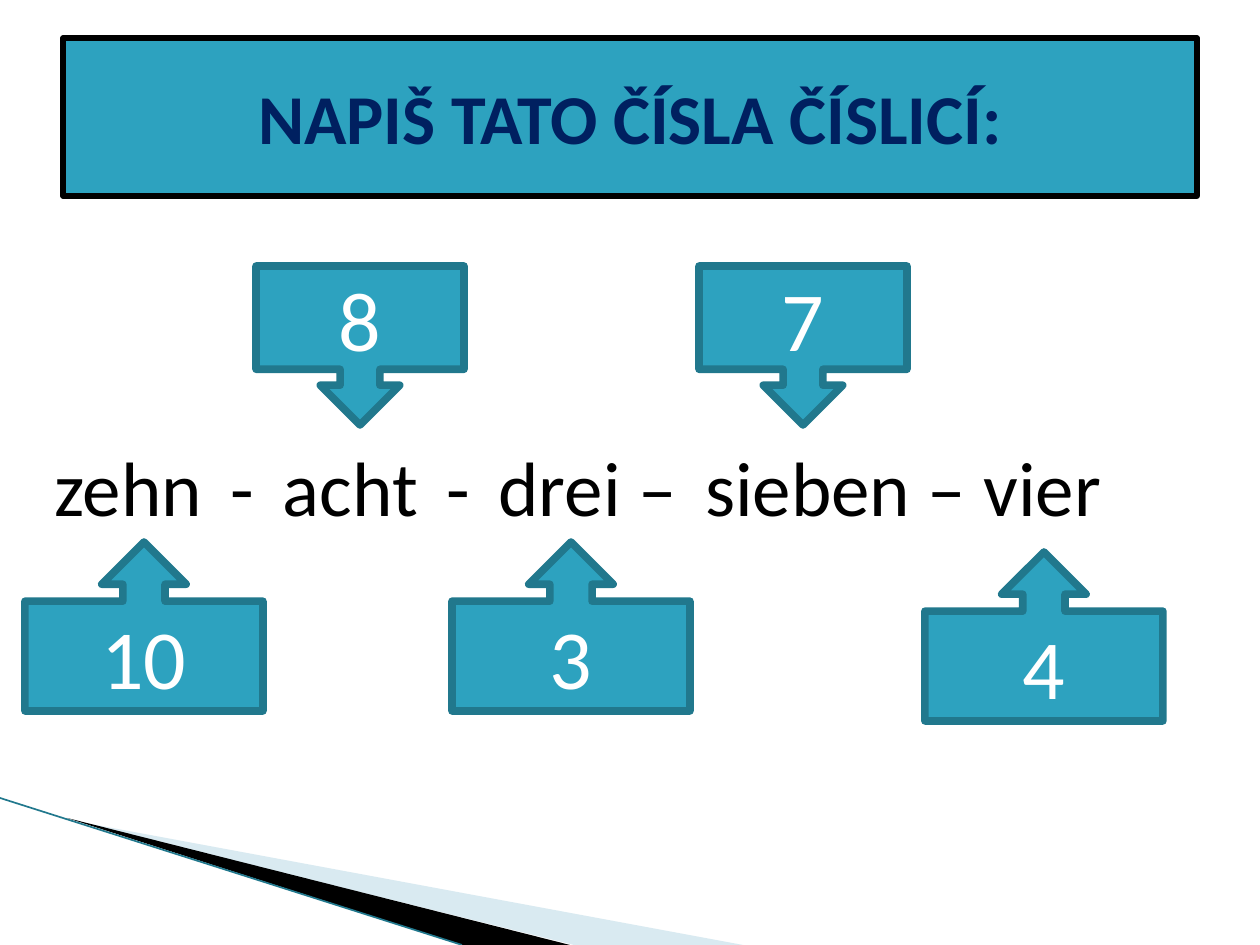
import pptx
import pptx.util
from lxml import etree
from pptx.dml.color import RGBColor
from pptx.enum.shapes import MSO_CONNECTOR, MSO_SHAPE
from pptx.enum.text import MSO_ANCHOR, MSO_AUTO_SIZE, PP_ALIGN
from pptx.oxml.ns import qn

# Content
TITLE = "NAPIŠ TATO ČÍSLA ČÍSLICÍ:"
WORDS = ["zehn", "-", "acht", "-", "drei –", "sieben – vier"]
ANSWERS_ABOVE = [("8", 256, 266), ("7", 699, 266)]
ANSWERS_BELOW = [("10", 25, 542), ("3", 452, 542), ("4", 925, 552)]

COLORS = {
    "teal": "2DA2BF", "edge": "21788D", "navy": "002060",
    "black": "000000", "white": "FFFFFF", "pale": "A0CBDC",
}
FONT = "Calibri"
PX = 914400 // 126  # EMU in one px


def px(*lengths):
    return [length * PX for length in lengths]


def color(name):
    return RGBColor.from_string(COLORS[name])


def place(shape, left, top, width, height):
    shape.left, shape.top, shape.width, shape.height = px(left, top, width, height)


def paint(shape, fill, line=None, width=0):
    shape.fill.solid()
    shape.fill.fore_color.rgb = color(fill)
    if line:
        shape.line.color.rgb = color(line)
        shape.line.width = pptx.util.Pt(width)
    else:
        shape.line.fill.background()


def add_text(para, text, *, size, ink, bold=False):
    para.alignment = PP_ALIGN.CENTER
    span = para.add_run()
    span.text = text
    span.font.name = FONT
    span.font.size = pptx.util.Pt(size)
    span.font.bold = bold
    span.font.color.rgb = color(ink)


def add_wedge(page, points, fill):
    builder = page.shapes.build_freeform(*points[0], scale=PX)
    builder.add_line_segments(points[1:], close=True)
    wedge = builder.convert_to_shape()
    wedge.shadow.inherit = False
    paint(wedge, fill)
    return wedge


def add_callout(page, kind, text, left, top, width, height):
    callout = page.shapes.add_shape(kind, *px(left, top, width, height))
    callout.shadow.inherit = False
    paint(callout, "teal", "edge", 4.33)
    callout.text_frame.vertical_anchor = MSO_ANCHOR.MIDDLE
    add_text(callout.text_frame.paragraphs[0], text, size=48, ink="white")


def main():
    deck = pptx.Presentation()
    deck.slide_width, deck.slide_height = px(1260, 945)
    page = deck.slides.add_slide(deck.slide_layouts[1])

    # Corner decoration
    pale = add_wedge(page, [(69, 820), (743, 945), (574, 945)], "pale")
    tint = pale.fill.fore_color.rgb and pale.element.spPr.find(".//" + qn("a:srgbClr"))
    etree.SubElement(tint, qn("a:alpha"), val="40000")
    add_wedge(page, [(67, 818), (570, 945), (462, 945)], "black")
    edge = page.shapes.add_connector(MSO_CONNECTOR.STRAIGHT, *px(0, 798, 462, 945))
    edge.line.color.rgb = color("edge")
    edge.line.width = pptx.util.Pt(0.95)
    etree.SubElement(edge.element.spPr, qn("a:effectLst"))

    # Title
    title = page.shapes.title
    place(title, 63, 38, 1134, 158)
    paint(title, "teal", "black", 3)
    title.text_frame.vertical_anchor = MSO_ANCHOR.MIDDLE
    add_text(title.text_frame.paragraphs[0], TITLE, size=40, ink="navy", bold=True)

    # Row of number words, set apart by wide spaces
    body = page.placeholders[1]
    place(body, 0, 220, 1162, 704)
    frame = body.text_frame
    frame.auto_size = MSO_AUTO_SIZE.NONE
    frame.vertical_anchor = MSO_ANCHOR.TOP
    frame.margin_left, frame.margin_top, frame.margin_right = px(0, 170, 6)
    para = frame.paragraphs[0]
    properties = para._p.get_or_add_pPr()
    properties.set("marL", "0")
    properties.set("indent", "0")
    etree.SubElement(properties, qn("a:buNone"))
    para.space_before = pptx.util.Pt(0)
    for index, word in enumerate(WORDS):
        if index:
            add_text(para, " ", size=72, ink="black")
        add_text(para, word, size=44, ink="black")

    # Answers pointing at the words
    for text, left, top in ANSWERS_BELOW:
        add_callout(page, MSO_SHAPE.UP_ARROW_CALLOUT, text, left, top, 238, 169)
    for text, left, top in ANSWERS_ABOVE:
        add_callout(page, MSO_SHAPE.DOWN_ARROW_CALLOUT, text, left, top, 208, 159)

    deck.save("out.pptx")


if __name__ == "__main__":
    main()
